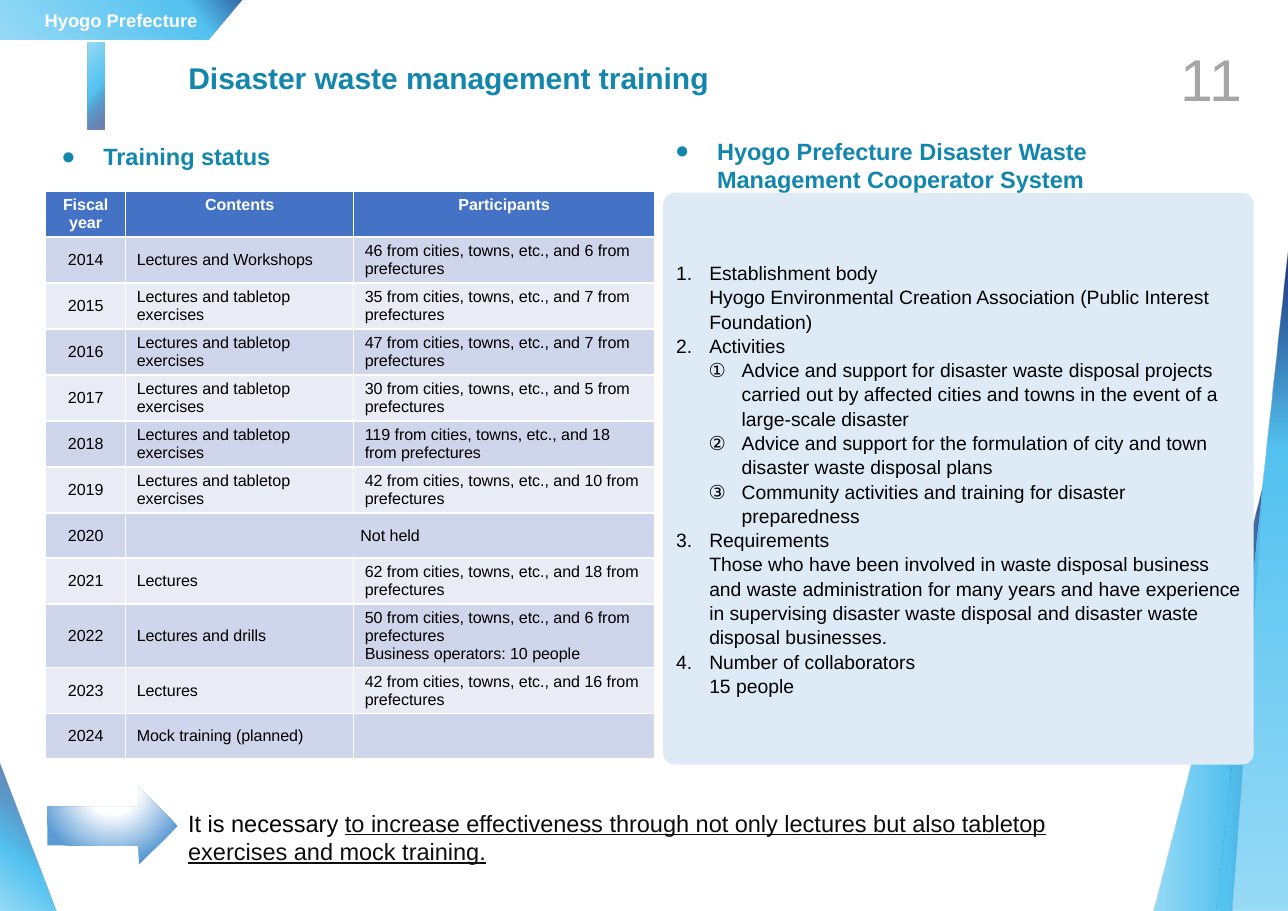
from dataclasses import dataclass

from lxml import etree
from pptx import Presentation
from pptx import util as u
from pptx.dml.color import RGBColor
from pptx.enum import shapes, text
from pptx.oxml import ns

Pt = u.Pt
FONT = "Arial"
LEFT, CENTER, RIGHT = text.PP_ALIGN.LEFT, text.PP_ALIGN.CENTER, text.PP_ALIGN.RIGHT
TOP, MIDDLE = text.MSO_ANCHOR.TOP, text.MSO_ANCHOR.MIDDLE
COLORS = {
    "white": "FFFFFF", "black": "000000", "ink": "0D0D0D", "teal": "1286AD",
    "gray": "A6A6A6", "sky": "54C3F1", "navy": "1C2B76", "steel": "336AA9",
    "blue": "5B9BD5", "header": "4472C4", "band": "CFD5EA", "pale": "E9EBF5",
    "panel": "DEEBF7",
}


@dataclass
class Stop:
    pos: int
    color: str
    alpha: int = 100


@dataclass
class Polygon:
    points: list[tuple[float, float]]
    stops: list[Stop]
    angle: int
    label: str = ""


@dataclass
class Item:
    text: str
    left: float = 21.6
    hang: float = 0


@dataclass
class Heading:
    idx: int
    text: str
    box: tuple[float, float, float, float]


SKY = Stop(0, "sky", 60)
POLYGONS = [
    Polygon([(0, 0), (158.4, 0), (136.1, 25.9), (0, 25.9)],
            [SKY, Stop(78, "sky"), Stop(99, "steel"), Stop(100, "navy", 62)],
            320, "Hyogo Prefecture"),
    Polygon([(0, 499), (36.7, 595.44), (0, 595.44)],
            [SKY, Stop(35, "sky"), Stop(100, "navy", 60)], 310),
    Polygon([(805, 595.44), (825.8, 314.6), (753.8, 595.44)],
            [SKY, Stop(68, "sky"), Stop(100, "navy", 80)], 0),
    Polygon([(841.68, 158.4), (841.68, 595.44), (794.9, 595.44)],
            [SKY, Stop(69, "sky"), Stop(100, "navy")], 270),
    Polygon([(57.6, 27.6), (68.4, 27.6), (68.4, 84.9), (57.6, 84.9)],
            [SKY, Stop(53, "sky"), Stop(100, "navy", 60)], 40),
]
HEADINGS = [
    Heading(1, "Training status", (33.8, 90, 375.8, 24.5)),
    Heading(3, "Hyogo Prefecture Disaster Waste Management Cooperator System",
            (434.9, 87.8, 375.8, 40)),
]
ITEMS = [
    Item("1.\tEstablishment body", hang=21.6),
    Item("Hyogo Environmental Creation Association (Public Interest Foundation)"),
    Item("2.\tActivities", hang=21.6),
    Item("①\tAdvice and support for disaster waste disposal projects carried out by "
         "affected cities and towns in the event of a large-scale disaster", 42.8, 21.6),
    Item("②\tAdvice and support for the formulation of city and town disaster waste "
         "disposal plans", 42.8, 21.6),
    Item("③\tCommunity activities and training for disaster preparedness", 42.8, 21.6),
    Item("3.\tRequirements", hang=21.6),
    Item("Those who have been involved in waste disposal business and waste "
         "administration for many years and have experience in supervising disaster "
         "waste disposal and disaster waste disposal businesses."),
    Item("4.\tNumber of collaborators", hang=21.6),
    Item("15 people"),
]
TABLETOP = "Lectures and tabletop exercises"
ROWS = [
    ("Fiscal year", "Contents", "Participants"),
    ("2014", "Lectures and Workshops", "46 from cities, towns, etc., and 6 from prefectures"),
    ("2015", TABLETOP, "35 from cities, towns, etc., and 7 from prefectures"),
    ("2016", TABLETOP, "47 from cities, towns, etc., and 7 from prefectures"),
    ("2017", TABLETOP, "30 from cities, towns, etc., and 5 from prefectures"),
    ("2018", TABLETOP, "119 from cities, towns, etc., and 18 from prefectures"),
    ("2019", TABLETOP, "42 from cities, towns, etc., and 10 from prefectures"),
    ("2020", "Not held", ""),
    ("2021", "Lectures", "62 from cities, towns, etc., and 18 from prefectures"),
    ("2022", "Lectures and drills",
     "50 from cities, towns, etc., and 6 from prefectures\nBusiness operators: 10 people"),
    ("2023", "Lectures", "42 from cities, towns, etc., and 16 from prefectures"),
    ("2024", "Mock training (planned)", ""),
]


def rgb(color: str) -> RGBColor:
    return RGBColor.from_string(COLORS[color])


def style(p, size: float, color: str, bold: bool = False, align=LEFT) -> None:
    p.alignment = align
    p.space_before = Pt(0)
    for r in p.runs:
        r.font.name, r.font.size, r.font.bold = FONT, Pt(size), bold
        r.font.color.rgb = rgb(color)


def frame(sp, anchor, side: float = 6.3, edge: float = 3.6):
    tf = sp.text_frame
    tf.word_wrap, tf.auto_size = True, text.MSO_AUTO_SIZE.NONE
    tf.vertical_anchor = anchor
    tf.margin_left = tf.margin_right = Pt(side)
    tf.margin_top = tf.margin_bottom = Pt(edge)
    return tf


def place(sp, left: float, top: float, width: float, height: float) -> None:
    sp.left, sp.top, sp.width, sp.height = Pt(left), Pt(top), Pt(width), Pt(height)


def indent(p, left: float, hang: float, bullet: str = "") -> None:
    pPr = p._p.get_or_add_pPr()
    pPr.set("marL", str(Pt(left)))
    pPr.set("indent", str(-Pt(hang)))
    if bullet:
        etree.SubElement(pPr, ns.qn("a:buChar")).set("char", bullet)
    else:
        etree.SubElement(pPr, ns.qn("a:buNone"))


def gradient(sp, stops: list[Stop], direction: str) -> None:
    gs = "".join(
        f'<a:gs pos="{st.pos * 1000}"><a:srgbClr val="{COLORS[st.color]}">'
        f'<a:alpha val="{st.alpha * 1000}"/></a:srgbClr></a:gs>' for st in stops)
    fill = etree.fromstring(f'<a:gradFill {ns.nsdecls("a")} rotWithShape="1">'
                            f"<a:gsLst>{gs}</a:gsLst>{direction}</a:gradFill>")
    sp.shadow.inherit = False
    sp.line.fill.background()
    sp.element.spPr.find(ns.qn("a:ln")).addprevious(fill)


def draw_polygon(s, poly: Polygon) -> None:
    points = [(Pt(x), Pt(y)) for x, y in poly.points]
    builder = s.shapes.build_freeform(*points[0])
    builder.add_line_segments(points[1:], close=True)
    sp = builder.convert_to_shape()
    gradient(sp, poly.stops, f'<a:lin ang="{poly.angle * 60000}" scaled="0"/>')
    if poly.label:
        tf = frame(sp, MIDDLE)
        tf.text = poly.label
        style(tf.paragraphs[0], 12, "white", True, CENTER)


def draw_table(s) -> None:
    tbl = s.shapes.add_table(len(ROWS), 3, Pt(29.8), Pt(124.8), Pt(398), Pt(352)).table
    for col, width in zip(tbl.columns, (52.4, 149, 196.6)):
        col.width = Pt(width)
    tbl.cell(7, 1).merge(tbl.cell(7, 2))
    for i, row in enumerate(ROWS):
        tbl.rows[i].height = Pt(29.3)
        for j, value in enumerate(row):
            cell = tbl.cell(i, j)
            cell.text = value
            cell.margin_top = cell.margin_bottom = Pt(3.4)
            cell.vertical_anchor = MIDDLE if i else TOP
            cell.fill.solid()
            cell.fill.fore_color.rgb = rgb("header" if i == 0 else "band" if i % 2 else "pale")
            centred = i == 0 or j == 0 or value == "Not held"
            for p in cell.text_frame.paragraphs:
                style(p, 10.5, "black" if i else "white", i == 0, CENTER if centred else LEFT)


def main() -> None:
    prs = Presentation()
    prs.slide_width, prs.slide_height = Pt(841.68), Pt(595.44)
    s = prs.slides.add_slide(prs.slide_layouts[4])
    ph = {sp.placeholder_format.idx: sp for sp in s.placeholders}
    ph[2].element.getparent().remove(ph[2].element)

    # Corner decoration and title bar
    for poly in POLYGONS:
        draw_polygon(s, poly)

    # Title and page number
    place(ph[0], 119.5, 35.3, 477.4, 50)
    tf = frame(ph[0], TOP, 3.6)
    tf.text = "Disaster waste management training"
    style(tf.paragraphs[0], 19.6, "teal", True)
    tf = frame(s.shapes.add_textbox(Pt(727.9), Pt(35.3), Pt(90), Pt(31.7)), MIDDLE, edge=0)
    tf.text = "11"
    style(tf.paragraphs[0], 38.5, "gray", align=RIGHT)

    # Section headings
    for heading in HEADINGS:
        place(ph[heading.idx], *heading.box)
        tf = frame(ph[heading.idx], MIDDLE)
        tf.text = heading.text
        indent(tf.paragraphs[0], 27.4, 27.4, "●")
        style(tf.paragraphs[0], 15.4, "teal", True)

    draw_table(s)

    # Cooperator system panel with its list on top
    sp = s.shapes.add_shape(shapes.MSO_SHAPE.ROUNDED_RECTANGLE,
                            Pt(433.4), Pt(126), Pt(385.9), Pt(373.7))
    sp.adjustments[0] = 0.02
    sp.shadow.inherit = False
    sp.fill.solid()
    sp.fill.fore_color.rgb = rgb("panel")
    sp.line.fill.background()
    sp.element.addnext(ph[4].element)
    place(ph[4], 435.6, 126, 381.6, 373.7)
    tf = frame(ph[4], MIDDLE)
    tf.text = "\n".join(item.text for item in ITEMS)
    for p, item in zip(tf.paragraphs, ITEMS):
        indent(p, item.left, item.hang)
        style(p, 12.6, "black")
        p.line_spacing = 1.05

    # Conclusion
    sp = s.shapes.add_shape(shapes.MSO_SHAPE.RIGHT_ARROW, Pt(31), Pt(514.8), Pt(85), Pt(50.4))
    gradient(sp, [Stop(0, "white"), Stop(35, "white"), Stop(100, "blue")],
             '<a:path path="circle"><a:fillToRect l="50000" t="-80000" r="50000" b="180000"/>'
             "</a:path>")
    tf = frame(s.shapes.add_textbox(Pt(115.9), Pt(525), Pt(630.7), Pt(45)), TOP, 7.2)
    p = tf.paragraphs[0]
    p.text = "It is necessary "
    r = p.add_run()
    r.text = ("to increase effectiveness through not only lectures but also tabletop "
              "exercises and mock training.")
    style(p, 15.4, "black")
    r.font.underline = True
    r.font.color.rgb = rgb("ink")

    prs.save("out.pptx")


if __name__ == "__main__":
    main()
